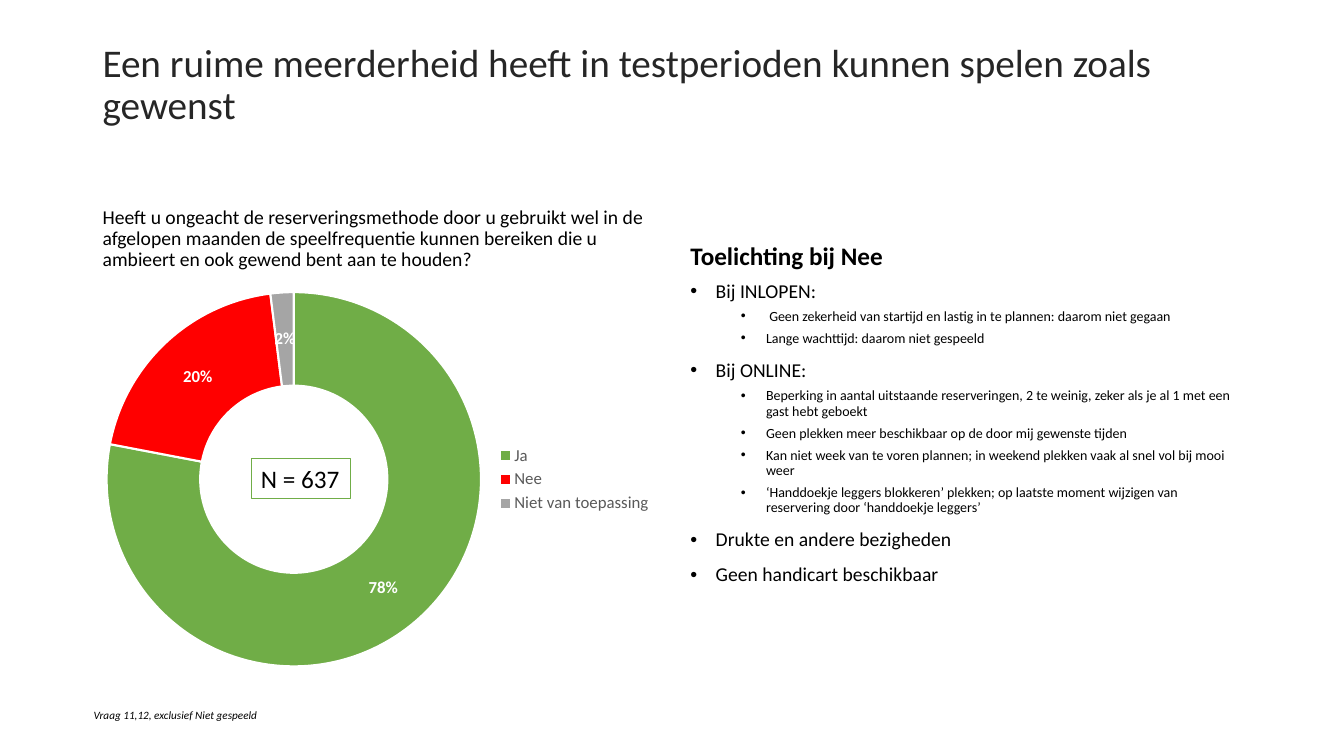
from lxml.etree import SubElement
from pptx import Presentation
from pptx.chart.data import CategoryChartData
from pptx.dml.color import RGBColor
from pptx.enum.chart import XL_CHART_TYPE, XL_LEGEND_POSITION
from pptx.enum.shapes import MSO_SHAPE
from pptx.enum.text import MSO_ANCHOR, MSO_AUTO_SIZE, PP_ALIGN
from pptx.oxml.ns import qn
from pptx.util import Inches, Pt

prs = Presentation()
prs.slide_width, prs.slide_height = Inches(13.33), Inches(7.5)
s = prs.slides.add_slide(prs.slide_layouts[6])

FONT = "Calibri"
LEFT, RIGHT = 6.9, 50.64
HEAD, BODY = 24.53, 36.53
COL_W, HEAD_H, BODY_H = 42.4, 12, 53.73


def style(font, size, color, bold=False, italic=False):
    font.name, font.size = FONT, Pt(size)
    font.bold, font.italic = bold, italic
    font.color.rgb = RGBColor.from_string(color)


def share(x, y, w, h):
    return [int(side * v / 100) for side, v in
            ((prs.slide_width, x), (prs.slide_height, y),
             (prs.slide_width, w), (prs.slide_height, h))]


headings = [
    (LEFT, 5.33, 82.97, MSO_ANCHOR.MIDDLE, 28, "262626", False,
     "Een ruime meerderheid heeft in testperioden kunnen spelen zoals gewenst"),
    (LEFT, HEAD, COL_W, MSO_ANCHOR.BOTTOM, 14, "000000", False,
     "Heeft u ongeacht de reserveringsmethode door u gebruikt wel in de afgelopen "
     "maanden de speelfrequentie kunnen bereiken die u ambieert en ook gewend bent "
     "aan te houden?"),
    (RIGHT, HEAD, COL_W, MSO_ANCHOR.BOTTOM, 18, "000000", True, "Toelichting bij Nee"),
]
for x, y, w, anchor, size, color, bold, text in headings:
    tf = s.shapes.add_textbox(*share(x, y, w, HEAD_H)).text_frame
    tf.word_wrap, tf.vertical_anchor = True, anchor
    p = tf.paragraphs[0]
    p.line_spacing = 0.9
    r = p.add_run()
    r.text = text
    style(r.font, size, color, bold)

data = CategoryChartData()
data.categories = ["Ja", "Nee", "Niet van toepassing"]
data.add_series("Series 1", (78, 20, 2))
chart = s.shapes.add_chart(XL_CHART_TYPE.DOUGHNUT,
                           *share(LEFT, BODY, COL_W, BODY_H), data).chart
style(chart.font, 10, "000000")
chart.has_title = False
chart.has_legend = True
chart.legend.position = XL_LEGEND_POSITION.RIGHT
chart.legend.include_in_layout = False
style(chart.legend.font, 12, "595959")

plot = chart.plots[0]
plot.vary_by_categories = True
plot._element.find(qn("c:holeSize")).set("val", "75")
plot.has_data_labels = True
labels = plot.data_labels
labels.show_percentage, labels.show_value = True, False
labels.number_format, labels.number_format_is_linked = "0%", False
style(labels.font, 12, "FFFFFF", bold=True)
for i, color in enumerate(("70AD47", "FF0000", "A5A5A5")):
    point = plot.series[0].points[i].format
    point.fill.solid()
    point.fill.fore_color.rgb = RGBColor.from_string(color)
    point.line.color.rgb = RGBColor.from_string("FFFFFF")
    point.line.width = Pt(1.5)

reasons = [
    (0, "Bij INLOPEN:"),
    (1, " Geen zekerheid van startijd en lastig in te plannen: daarom niet gegaan"),
    (1, "Lange wachttijd: daarom niet gespeeld"),
    (0, "Bij ONLINE:"),
    (1, "Beperking in aantal uitstaande reserveringen, 2 te weinig, zeker als je al 1 "
        "met een gast hebt geboekt"),
    (1, "Geen plekken meer beschikbaar op de door mij gewenste tijden"),
    (1, "Kan niet week van te voren plannen; in weekend plekken vaak al snel vol bij "
        "mooi weer"),
    (1, "‘Handdoekje leggers blokkeren’ plekken; op laatste moment wijzigen van "
        "reservering door ‘handdoekje leggers’"),
    (0, "Drukte en andere bezigheden"),
    (0, "Geen handicart beschikbaar"),
]
tf = s.shapes.add_textbox(*share(RIGHT, BODY, COL_W, BODY_H)).text_frame
tf.word_wrap = True
for i, (level, text) in enumerate(reasons):
    p = tf.add_paragraph() if i else tf.paragraphs[0]
    p.level, p.line_spacing = level, 0.9
    p.space_before = Pt((10, 5)[level] if i else 0)
    pPr = p._p.get_or_add_pPr()
    pPr.set("marL", str(Inches(0.25 + 0.5 * level)))
    pPr.set("indent", str(Inches(-0.25)))
    SubElement(pPr, qn("a:buFont")).set("typeface", "Arial")
    SubElement(pPr, qn("a:buChar")).set("char", "•")
    r = p.add_run()
    r.text = text
    style(r.font, (14, 10)[level], "000000")

notes = [
    ((6.23, 93.07, 13.88, 3.2), None, 8, True, "Vraag 11,12, exclusief Niet gespeeld"),
    ((18.68, 60.67, 7.43, 5.33), "70AD47", 18, False, "N = 637"),
]
for box, border, size, italic, text in notes:
    sp = s.shapes.add_shape(MSO_SHAPE.RECTANGLE, *share(*box))
    sp.shadow.inherit = False
    sp.fill.background()
    if border:
        sp.line.color.rgb = RGBColor.from_string(border)
        sp.line.width = Pt(0.75)
    else:
        sp.line.fill.background()
    tf = sp.text_frame
    tf.word_wrap, tf.auto_size = False, MSO_AUTO_SIZE.SHAPE_TO_FIT_TEXT
    tf.vertical_anchor = MSO_ANCHOR.TOP
    p = tf.paragraphs[0]
    p.alignment = PP_ALIGN.LEFT
    r = p.add_run()
    r.text = text
    style(r.font, size, "000000", italic=italic)

prs.save("out.pptx")
